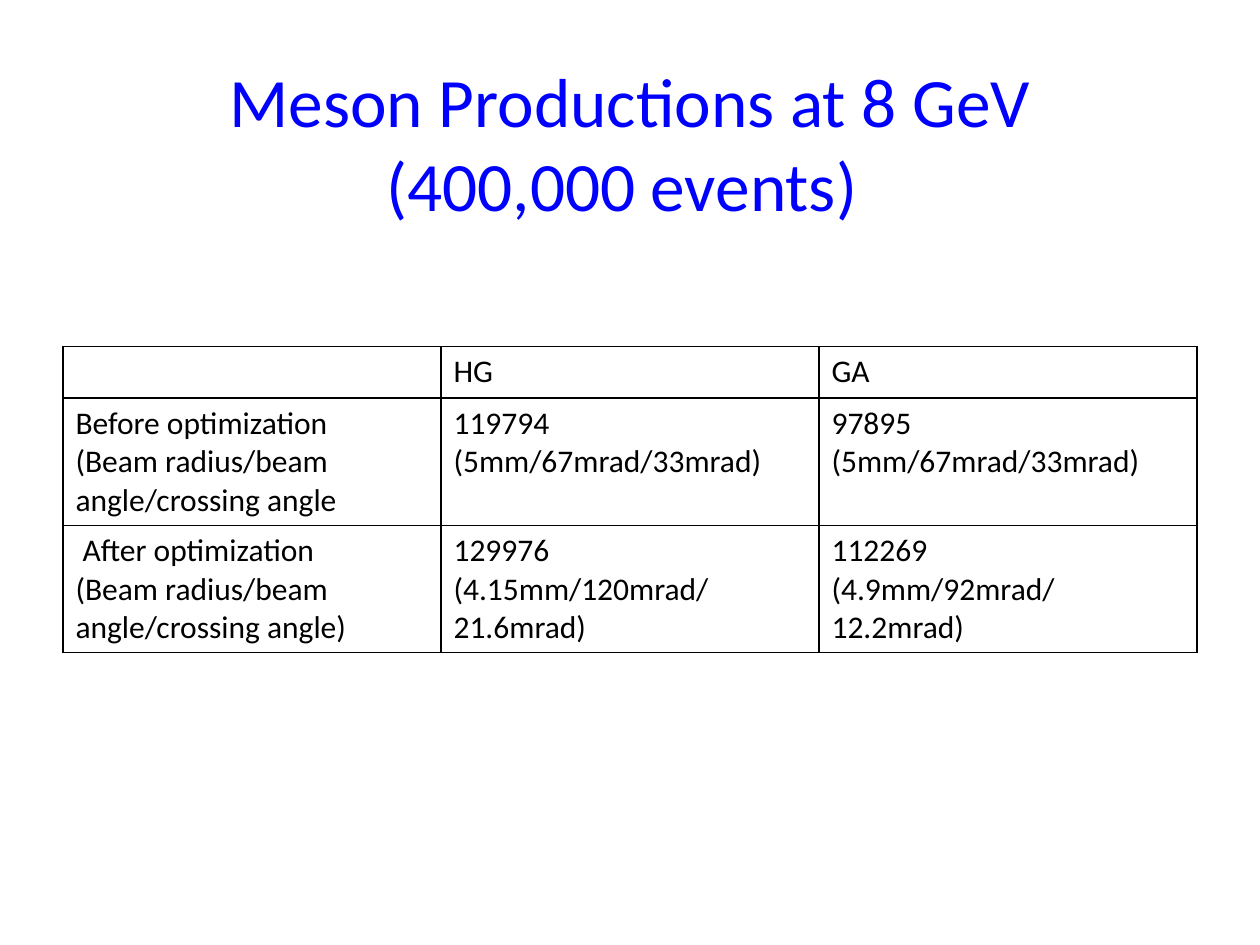
from lxml import etree
from pptx import Presentation
from pptx.dml.color import RGBColor
from pptx.enum import text
from pptx.oxml.ns import qn
from pptx.util import Inches, Pt

COLORS = {"title": "0000FF", "ink": "000000"}
RESULTS = [
    ["", "HG", "GA"],
    ["Before optimization\n(Beam radius/beam angle/crossing angle",
     "119794\n(5mm/67mrad/33mrad)",
     "97895\n(5mm/67mrad/33mrad)"],
    [" After optimization\n(Beam radius/beam angle/crossing angle)",
     "129976\n(4.15mm/120mrad/21.6mrad)",
     "112269\n(4.9mm/92mrad/12.2mrad)"],
]


def write(frame, words, size=18, color="ink", font="Calibri", align=text.PP_ALIGN.LEFT):
    """Fill a text frame; newlines part paragraphs, vertical tabs part lines."""
    frame.text = words
    for paragraph in frame.paragraphs:
        paragraph.alignment = align
        for run in paragraph.runs:
            run.font.name = font
            run.font.size = Pt(size)
            run.font.color.rgb = RGBColor.from_string(COLORS[color])


class ResultSlide:
    """Holds the style and the current slide."""

    def __init__(self, deck, border=1):
        self.border = Pt(border)
        self.slide = deck.slides.add_slide(deck.slide_layouts[6])

    def title(self, words, left, top, width, height):
        box = self.slide.shapes.add_textbox(
            Inches(left), Inches(top), Inches(width), Inches(height))
        frame = box.text_frame
        frame.word_wrap = True
        frame.vertical_anchor = text.MSO_ANCHOR.MIDDLE
        write(frame, words, size=39.6, color="title", align=text.PP_ALIGN.CENTER)

    def outline(self, cell):
        properties = cell._tc.get_or_add_tcPr()
        for place, side in enumerate(("a:lnL", "a:lnR", "a:lnT", "a:lnB")):
            line = etree.Element(qn(side), w=str(self.border))
            fill = etree.SubElement(line, qn("a:solidFill"))
            etree.SubElement(fill, qn("a:srgbClr"), val=COLORS["ink"])
            properties.insert(place, line)

    def table(self, rows, left, top, width, heights):
        grid = self.slide.shapes.add_table(
            len(rows), len(rows[0]), Inches(left), Inches(top),
            Inches(width), Inches(sum(heights))).table
        grid.first_row = grid.horz_banding = False
        for r, (values, height) in enumerate(zip(rows, heights)):
            grid.rows[r].height = Inches(height)
            for c, value in enumerate(values):
                cell = grid.cell(r, c)
                cell.fill.background()
                self.outline(cell)
                write(cell.text_frame, value)


def main():
    deck = Presentation()
    deck.slide_width, deck.slide_height = Inches(10), Inches(7.5)
    mesons = ResultSlide(deck)
    mesons.title("Meson Productions at 8 GeV\v(400,000 events) ", 0.5, 0.5, 9, 1.25)
    mesons.table(RESULTS, 0.5, 2.75, 9, [0.41, 1.01, 1.01])
    deck.save("out.pptx")


if __name__ == "__main__":
    main()
